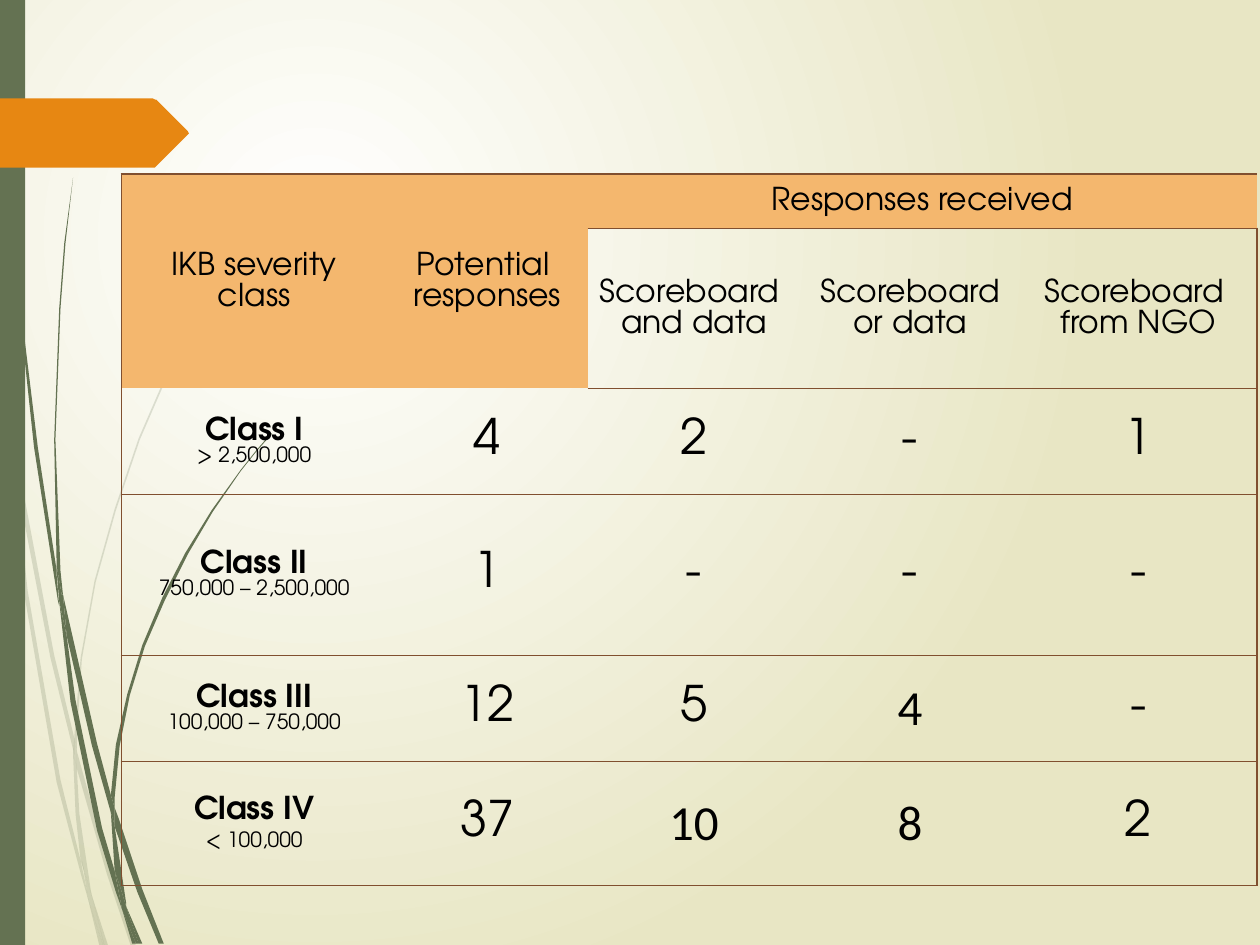
import pptx
import pptx.dml.color
import pptx.enum.shapes
import pptx.enum.text
import pptx.oxml
import pptx.oxml.ns
import pptx.util
from lxml import etree

Pt = pptx.util.Pt
GREEN = pptx.dml.color.RGBColor(0x64, 0x72, 0x52)
ORANGE = pptx.dml.color.RGBColor(0xE7, 0x87, 0x12)
PEACH = pptx.dml.color.RGBColor(0xF4, 0xB7, 0x6E)
BROWN = pptx.dml.color.RGBColor(0x80, 0x4F, 0x2F)
BLACK = pptx.dml.color.RGBColor(0, 0, 0)
WHITE = pptx.dml.color.RGBColor(0xFF, 0xFF, 0xFF)
CREAM = pptx.dml.color.RGBColor(0xE8, 0xE6, 0xC4)

HEAD_FONT = "TeX Gyre Adventor"
NUMBER_FONT = "Calibri"
PLAIN_TABLE = "{2D5ABB26-0587-4C30-8999-92F81FD0307C}"
OUTLINE_UNIT = Pt(0.72)

PALE_GRASS = [
    [(8, 350), (6, 322), (0, 282), (0, 299), (7, 344)],
    [(40, 522), (59, 599), (59, 586), (43, 520), (10, 345), (12, 376)],
    [(64, 607), (61, 596), (61, 610), (85, 694), (104, 751), (108, 751), (88, 692)],
    [(83, 751), (86, 751), (73, 711)],
    [(64, 683), (48, 619), (22, 469), (12, 376), (8, 350), (19, 470), (45, 621),
     (64, 693), (70, 714), (69, 707)],
    [(58, 599), (60, 646), (64, 683), (67, 692), (73, 711), (72, 706), (63, 646),
     (61, 610), (61, 608)],
    [(61, 584), (65, 523), (76, 462), (92, 405), (111, 349), (134, 296), (159, 245),
     (187, 198), (201, 175), (217, 154), (217, 153), (201, 175), (186, 197), (158, 244),
     (133, 295), (110, 348), (91, 404), (75, 461), (64, 522), (59, 584), (59, 586), (61, 596)],
    [(70, 714), (79, 751), (82, 751)],
    [(61, 608), (61, 610), (61, 596), (59, 586), (58, 599)],
    [(67, 692), (65, 683), (69, 707), (70, 714), (82, 751), (83, 751), (73, 711)],
]
DARK_GRASS = [
    [(5, 110), (14, 233), (27, 355), (46, 477), (47, 481), (45, 457), (45, 453),
     (30, 355), (15, 232), (6, 109), (4, 48), (3, 0), (2, 0), (3, 48)],
    [(73, 592), (88, 645), (88, 633), (88, 631), (77, 590), (50, 472), (53, 505)],
    [(94, 649), (91, 641), (91, 656), (109, 708), (126, 749), (130, 749), (113, 706)],
    [(91, 691), (81, 657), (60, 556), (53, 505), (47, 477), (56, 557), (77, 659),
     (92, 708), (97, 722), (96, 717)],
    [(50, 472), (48, 453), (44, 349), (48, 245), (52, 193), (58, 141), (51, 193),
     (47, 245), (43, 349), (45, 449), (49, 472)],
    [(110, 749), (113, 749), (100, 719)],
    [(47, 477), (53, 505), (50, 472), (49, 472), (45, 449), (45, 453)],
    [(91, 633), (95, 592), (103, 552), (115, 513), (131, 476), (149, 440), (169, 406),
     (191, 374), (203, 359), (216, 344), (215, 344), (203, 358), (191, 373), (168, 405),
     (147, 439), (129, 474), (113, 512), (101, 551), (92, 591), (88, 631), (91, 641)],
    [(97, 722), (105, 749), (108, 749)],
    [(88, 645), (91, 691), (96, 706), (100, 719), (100, 716), (91, 656), (90, 651)],
    [(88, 645), (90, 651), (91, 656), (91, 641), (88, 631), (88, 633)],
    [(96, 706), (91, 691), (96, 717), (97, 722), (108, 749), (110, 749), (100, 719)],
]
ARROW = [(149, 107), (124, 132), (123, 133), (121, 133), (0, 133), (0, 78),
         (121, 78), (123, 79), (124, 79), (149, 104), (149.5, 105.5)]

COLUMN_WIDTHS = [152, 114.5, 121.5, 125.5, 135.5]
ROW_HEIGHTS = [31, 91.5, 60.5, 92, 61, 70.5]
HEADINGS = {
    (0, 0): "IKB severity class",
    (0, 1): "Potential \nresponses",
    (0, 2): "Responses received",
    (1, 2): "Scoreboard \nand data",
    (1, 3): "Scoreboard\nor data",
    (1, 4): "Scoreboard \nfrom NGO",
}
CLASSES = [
    ("Class I", "> 2,500,000", ["4", "2", "-", "1"]),
    ("Class II", "750,000 – 2,500,000", ["1", "-", "-", "-"]),
    ("Class III", "100,000 – 750,000", ["12", "5", "4", "-"]),
    ("Class IV", "< 100,000", ["37", "10", "8", "2"]),
]
CALIBRI_CELLS = {(4, 3), (5, 2), (5, 3)}

HEADING_PARA = {"line_spacing": 1.07, "space_before": Pt(4), "space_after": Pt(4)}
CLASS_PARA = {"line_spacing": 1.02, "space_before": Pt(2), "space_after": Pt(2)}
NUMBER_PARA = {"space_before": Pt(6), "space_after": Pt(6)}
MIDDLE = {"vertical_anchor": pptx.enum.text.MSO_ANCHOR.MIDDLE}
WIDE_CELL = {**MIDDLE, "margin_left": Pt(6.5), "margin_right": Pt(6.5),
             "margin_top": Pt(3.6), "margin_bottom": Pt(3.6)}
TIGHT_CELL = {**MIDDLE, "margin_left": Pt(4.3), "margin_right": Pt(4.3),
              "margin_top": 0, "margin_bottom": 0}


def apply_format(target, values):
    for name, value in values.items():
        setattr(target, name, value)


def add_child(parent, tag, **attributes):
    return etree.SubElement(parent, pptx.oxml.ns.qn(tag), attributes)


def paint_background(page):
    fill = page.background.fill
    fill.gradient()
    for stop, color in zip(fill.gradient_stops, (WHITE, CREAM)):
        stop.color.rgb = color
    gradient = page.background._cSld.find(".//" + pptx.oxml.ns.qn("a:gradFill"))
    gradient.remove(gradient.find(pptx.oxml.ns.qn("a:lin")))
    circle = add_child(gradient, "a:path", path="circle")
    add_child(circle, "a:fillToRect", l="50000", t="50000", r="100000", b="100000")


def paint_shape(shape, color, opacity=100):
    shape.shadow.inherit = False
    shape.fill.solid()
    shape.fill.fore_color.rgb = color
    shape.line.fill.background()
    if opacity < 100:
        solid = shape._element.spPr.find(pptx.oxml.ns.qn("a:solidFill"))
        add_child(solid[0], "a:alpha", val=str(opacity * 1000))


def add_outline(page, points, color, opacity=100):
    builder = page.shapes.build_freeform(*points[0], scale=OUTLINE_UNIT)
    builder.add_line_segments(points[1:], close=True)
    paint_shape(builder.convert_to_shape(), color, opacity)


def add_bar(page):
    rectangle = pptx.enum.shapes.MSO_SHAPE.RECTANGLE
    paint_shape(page.shapes.add_shape(rectangle, 0, 0, Pt(14.4), Pt(540)), GREEN)


def add_span(para, text, size, bold=False, font=HEAD_FONT):
    for index, line in enumerate(text.split("\n")):
        if index:
            para.add_line_break()
        span = para.add_run()
        span.text = line
        apply_format(span.font, {"name": font, "size": Pt(size), "bold": bold})
        span.font.color.rgb = BLACK


def format_para(para, values):
    apply_format(para, {"alignment": pptx.enum.text.PP_ALIGN.CENTER, **values})
    return para


def draw_borders(cell, sides):
    properties = cell._tc.get_or_add_tcPr()
    for index, side in enumerate(sides):
        line = etree.Element(pptx.oxml.ns.qn("a:ln" + side), w=str(Pt(0.75)))
        solid = add_child(line, "a:solidFill")
        add_child(solid, "a:srgbClr", val=str(BROWN))
        properties.insert(index, line)


def border_sides(row, column):
    label = column < 2
    rules = {"L": column == 0, "R": column == 4,
             "T": not (label and row in (1, 2)), "B": not (label and row < 2)}
    return [side for side, shown in rules.items() if shown]


def fill_class_row(table, row, name, limits, numbers):
    frame = table.cell(row, 0).text_frame
    para = format_para(frame.paragraphs[0], CLASS_PARA)
    add_span(para, name, 18, True)
    if row == len(ROW_HEIGHTS) - 1:
        para = format_para(frame.add_paragraph(), CLASS_PARA)
    else:
        para.add_line_break()
    add_span(para, limits, 12)
    for column, number in enumerate(numbers, 1):
        para = format_para(table.cell(row, column).text_frame.paragraphs[0], NUMBER_PARA)
        font = NUMBER_FONT if (row, column) in CALIBRI_CELLS else HEAD_FONT
        add_span(para, number, 28, font=font)


def add_response_table(page):
    frame = page.shapes.add_table(len(ROW_HEIGHTS), len(COLUMN_WIDTHS), Pt(69.3), Pt(99.4),
                                  Pt(sum(COLUMN_WIDTHS)), Pt(sum(ROW_HEIGHTS)))
    table = frame.table
    apply_format(table, {"first_row": False, "horz_banding": False})
    table._tbl.tblPr.find(pptx.oxml.ns.qn("a:tableStyleId")).text = PLAIN_TABLE
    for column, width in zip(table.columns, COLUMN_WIDTHS):
        column.width = Pt(width)
    for row, height in zip(table.rows, ROW_HEIGHTS):
        row.height = Pt(height)
    for row in range(len(ROW_HEIGHTS)):
        for column in range(len(COLUMN_WIDTHS)):
            cell = table.cell(row, column)
            peach = row == 0 or (row == 1 and column < 2)
            apply_format(cell, WIDE_CELL if peach else TIGHT_CELL)
            if peach:
                cell.fill.solid()
                cell.fill.fore_color.rgb = PEACH
            else:
                cell.fill.background()
            draw_borders(cell, border_sides(row, column))
    for first, last in (((0, 0), (1, 0)), ((0, 1), (1, 1)), ((0, 2), (0, 4))):
        table.cell(*first).merge(table.cell(*last))
    for place, text in HEADINGS.items():
        add_span(format_para(table.cell(*place).text_frame.paragraphs[0], HEADING_PARA), text, 18)
    for row, entry in enumerate(CLASSES, 2):
        fill_class_row(table, row, *entry)


def main():
    deck = pptx.Presentation()
    apply_format(deck, {"slide_width": Pt(720), "slide_height": Pt(540)})
    page = deck.slides.add_slide(deck.slide_layouts[6])
    paint_background(page)
    for blades, opacity in ((PALE_GRASS, 20), (DARK_GRASS, 100)):
        for blade in blades:
            add_outline(page, blade, GREEN, opacity)
    add_bar(page)
    add_outline(page, ARROW, ORANGE)
    add_response_table(page)
    deck.save("out.pptx")


if __name__ == "__main__":
    main()
